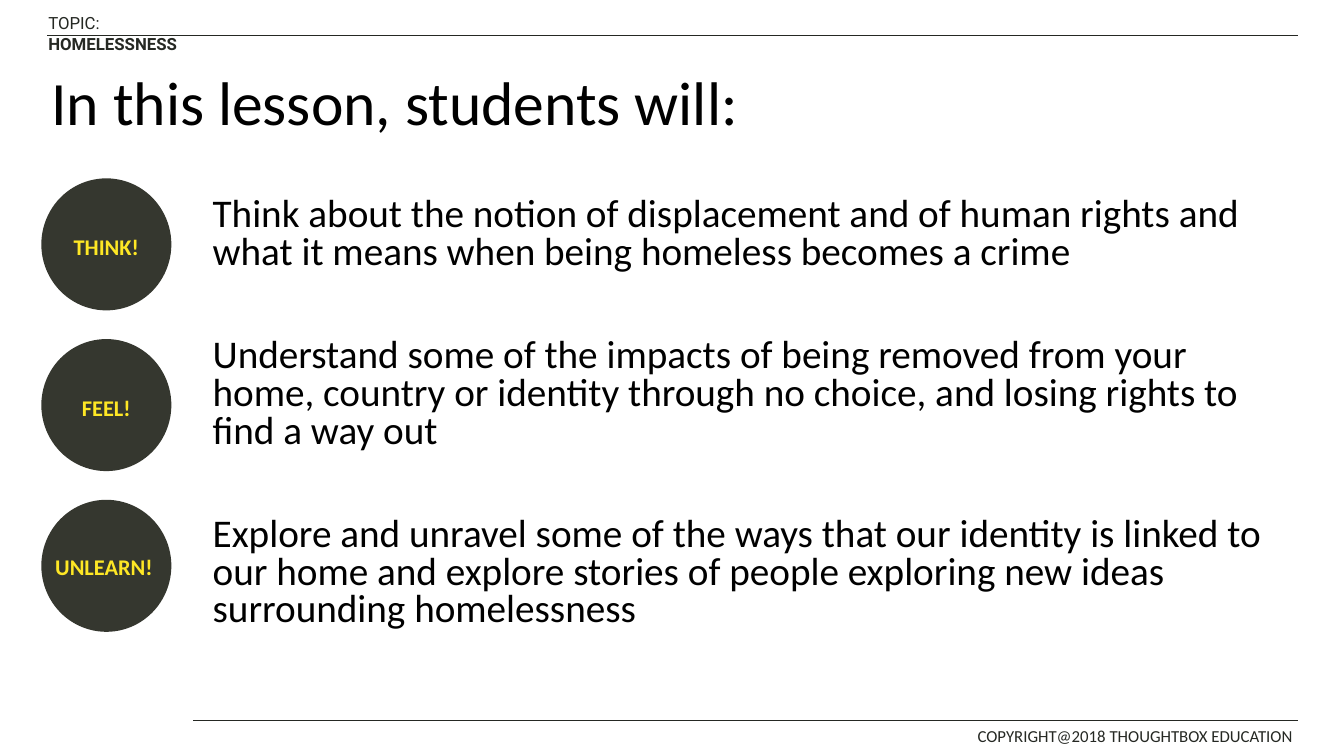
from lxml import etree
from pptx import Presentation
from pptx.dml.color import RGBColor
from pptx.enum.shapes import MSO_CONNECTOR, MSO_SHAPE
from pptx.enum.text import MSO_ANCHOR, MSO_AUTO_SIZE, PP_ALIGN
from pptx.oxml.ns import qn
from pptx.util import Pt

OVAL = MSO_SHAPE.OVAL
STRAIGHT = MSO_CONNECTOR.STRAIGHT
TOP, MIDDLE = MSO_ANCHOR.TOP, MSO_ANCHOR.MIDDLE
LEFT, CENTER = PP_ALIGN.LEFT, PP_ALIGN.CENTER
NO_FIT = MSO_AUTO_SIZE.NONE

COLORS = {"ink": "000000", "rule": "252823", "disc": "35372F", "accent": "FEE725"}

AIMS = [
    "Think about the notion of displacement and of human rights and "
    "what it means when being homeless becomes a crime",
    "Understand some of the impacts of being removed from your home, country "
    "or identity through no choice, and losing rights to find a way out",
    "Explore and unravel some of the ways that our identity is linked to our home "
    "and explore stories of people exploring new ideas surrounding homelessness",
]
DISC_LEFT, DISC_TOP, DISC_STEP = 29.5, 127.4, 114.8
DISC_WIDTH, DISC_HEIGHT = 92.9, 94.3


def color(name):
    return RGBColor.from_string(COLORS[name])


def write(paragraph, text, size=16, ink="ink", font="Calibri", bold=False,
          align=LEFT, spacing=1.0, before=0, after=0):
    """Append a formatted run to a paragraph."""
    paragraph.alignment = align
    paragraph.line_spacing = spacing
    paragraph.space_before, paragraph.space_after = Pt(before), Pt(after)
    run = paragraph.add_run()
    run.text = text
    run.font.name, run.font.size, run.font.bold = font, Pt(size), bold
    run.font.color.rgb = color(ink)


class LessonSlide:
    """Hold the slide and draw its elements in the lesson style."""

    def __init__(self, deck):
        self.slide = deck.slides.add_slide(deck.slide_layouts[1])
        self.shapes = self.slide.shapes

    def place(self, holder, left, top, width, height, anchor):
        holder.left, holder.top = Pt(left), Pt(top)
        holder.width, holder.height = Pt(width), Pt(height)
        frame = holder.text_frame
        frame.auto_size, frame.vertical_anchor = NO_FIT, anchor
        return frame

    def title(self, text, *box):
        frame = self.place(self.shapes.title, *box, MIDDLE)
        write(frame.paragraphs[0], text, size=44, spacing=0.9)

    def aims(self, aims, *box):
        frame = self.place(self.slide.placeholders[1], *box, TOP)
        for index, aim in enumerate(aims):
            paragraph = frame.add_paragraph() if index else frame.paragraphs[0]
            properties = paragraph._p.get_or_add_pPr()
            properties.set("marL", "0")
            properties.set("indent", "0")
            etree.SubElement(properties, qn("a:buNone"))
            write(paragraph, aim, size=28, spacing=0.8, before=47 if index else 0)

    def label(self, runs, left, top, width, height, **style):
        box = self.shapes.add_textbox(Pt(left), Pt(top), Pt(width), Pt(height))
        box.text_frame.word_wrap = True
        for text, bold in runs:
            write(box.text_frame.paragraphs[0], text, bold=bold, **style)

    def rule(self, left, right, y):
        line = self.shapes.add_connector(STRAIGHT, Pt(left), Pt(y), Pt(right), Pt(y))
        line.line.color.rgb = color("rule")
        line.line.width = Pt(1)
        etree.SubElement(line._element.spPr, qn("a:effectLst"))

    def disc(self, row, text=None):
        disc = self.shapes.add_shape(
            OVAL, Pt(DISC_LEFT), Pt(DISC_TOP + row * DISC_STEP), Pt(DISC_WIDTH), Pt(DISC_HEIGHT))
        disc.shadow.inherit = False
        disc.fill.solid()
        disc.fill.fore_color.rgb = color("disc")
        disc.line.fill.background()
        if text:
            disc.text_frame.vertical_anchor = MIDDLE
            write(disc.text_frame.paragraphs[0], text, ink="accent", bold=True,
                  align=CENTER, spacing=1.15, after=10)


def main():
    deck = Presentation()
    deck.slide_width, deck.slide_height = Pt(960), Pt(540)
    lesson = LessonSlide(deck)
    lesson.label([("TOPIC: ", False), ("HOMELESSNESS", True)], 27.4, 5.8, 135.4, 21.6,
                 size=12, ink="rule", font="Roboto")
    lesson.rule(33.8, 927.4, 25.2)
    lesson.label([("COPYRIGHT@2018 THOUGHTBOX EDUCATION", False)], 691.2, 514.8, 244.8, 22.3,
                 size=12, ink="rule")
    lesson.rule(138.2, 927.4, 514.8)
    lesson.title("In this lesson, students will:", 29.5, 23, 828, 104.4)
    lesson.aims(AIMS, 144.7, 137.5, 785.5, 342.7)
    for row, verb in enumerate(["THINK!", "FEEL!", None]):
        lesson.disc(row, verb)
    lesson.label([("UNLEARN!", True)], 32.4, 391.7, 86.4, 26.6, ink="accent")
    deck.save("out.pptx")


if __name__ == "__main__":
    main()
